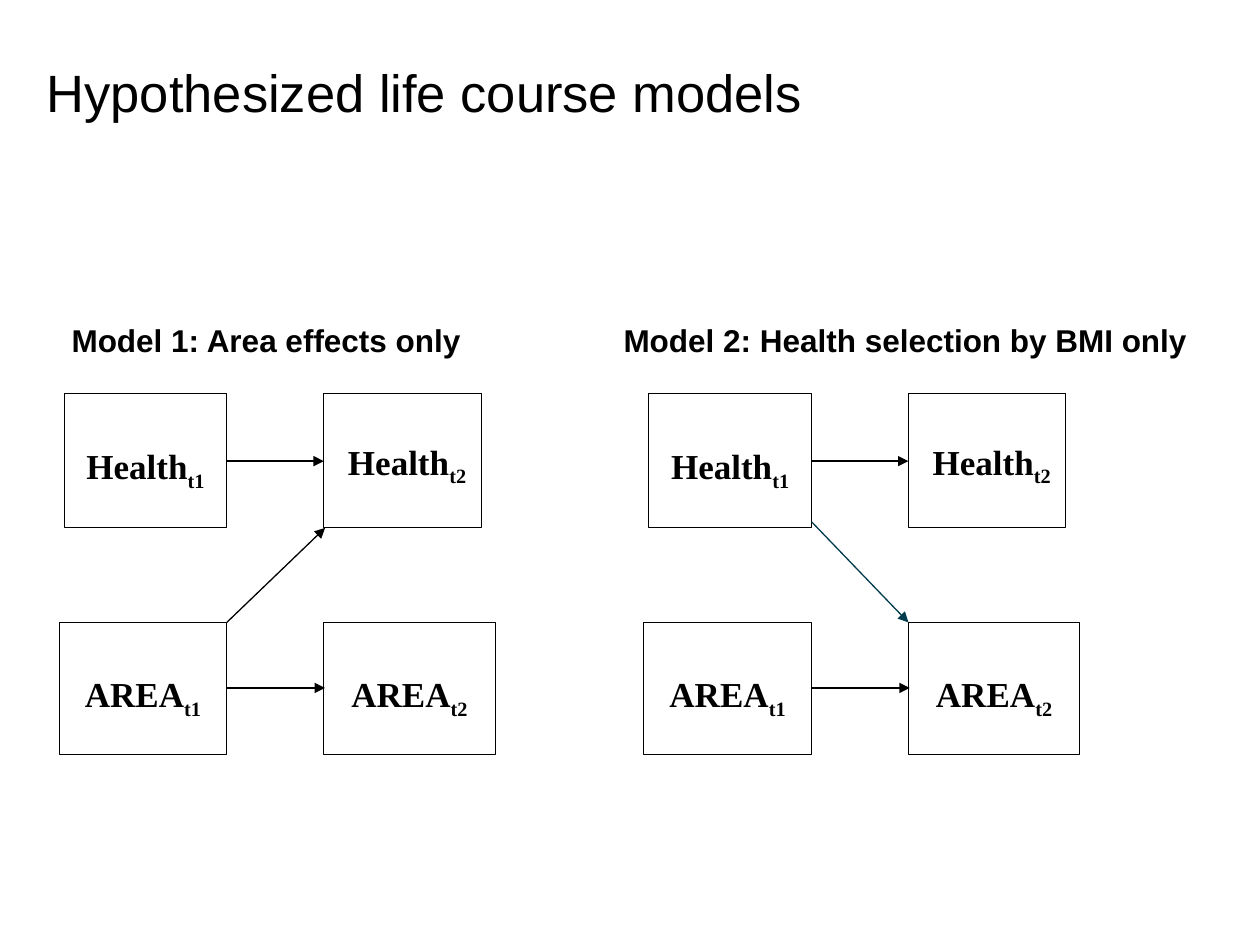
from lxml import etree
from pptx import Presentation
from pptx.dml.color import RGBColor
from pptx.enum.shapes import MSO_CONNECTOR, MSO_SHAPE
from pptx.enum.text import MSO_ANCHOR, MSO_AUTO_SIZE, PP_ALIGN
from pptx.oxml.ns import qn
from pptx.util import Inches, Pt

RECTANGLE = MSO_SHAPE.RECTANGLE
STRAIGHT = MSO_CONNECTOR.STRAIGHT
MIDDLE, TOP = MSO_ANCHOR.MIDDLE, MSO_ANCHOR.TOP
CENTER, LEFT = PP_ALIGN.CENTER, PP_ALIGN.LEFT

BLACK = RGBColor(0x00, 0x00, 0x00)
WHITE = RGBColor(0xFF, 0xFF, 0xFF)
TEAL = RGBColor(0x00, 0x3B, 0x4E)

# Content: places are inches, x measured from the left of each model
TITLE = "Hypothesized life course models"

# word, time, (left, top, width, height), left inset, top inset
VARIABLES = [
    ("Health", "t2", (2.1, 3.12, 1.25, 1.07), 0.17, 0.05),
    ("Health", "t1", (0.04, 3.12, 1.29, 1.07), 0.1, 0.12),
    ("AREA", "t2", (2.1, 4.94, 1.36, 1.05), 0.1, 0.12),
    ("AREA", "t1", (0, 4.94, 1.33, 1.05), 0.1, 0.12),
]

# start, end, colour, line width in points
SHARED_ARROWS = [
    ((1.33, 3.66), (2.1, 3.66), BLACK, 1),
    ((1.33, 5.46), (2.11, 5.46), BLACK, 0.75),
]

# heading, heading left and width, model left, diagonal arrow
MODELS = [
    ("Model 1: Area effects only", 0.47, 4.06, 0.47,
     ((1.33, 4.94), (2.11, 4.19), BLACK, 0.75)),
    ("Model 2: Health selection by BMI only", 4.85, 4.72, 5.11,
     ((1.33, 4.14), (2.1, 4.94), TEAL, 0.75)),
]


def add_run(paragraph, text, font_name, size, bold):
    run = paragraph.add_run()
    run.text = text
    run.font.name = font_name
    run.font.size = Pt(size)
    run.font.bold = bold
    run.font.color.rgb = BLACK
    return run


def add_variable(group, origin, word, time, place, left_inset, top_inset):
    left, top, width, height = place
    box = group.shapes.add_shape(RECTANGLE, Inches(origin + left), Inches(top),
                                 Inches(width), Inches(height))
    box.shadow.inherit = False
    box.fill.solid()
    box.fill.fore_color.rgb = WHITE
    box.line.color.rgb = BLACK
    box.line.width = Pt(0.5)
    frame = box.text_frame
    frame.word_wrap = True
    frame.vertical_anchor = MIDDLE
    frame.margin_left = Inches(left_inset)
    frame.margin_top = Inches(top_inset)
    paragraph = frame.paragraphs[0]
    paragraph.alignment = CENTER
    paragraph.line_spacing = 1.15
    add_run(paragraph, word, "Times New Roman", 20, True)
    subscript = add_run(paragraph, time, "Times New Roman", 20, True)
    subscript.font._element.set("baseline", "-25000")


def add_arrow(group, origin, start, end, color, width):
    arrow = group.shapes.add_connector(
        STRAIGHT, Inches(origin + start[0]), Inches(start[1]),
        Inches(origin + end[0]), Inches(end[1]))
    arrow.line.color.rgb = color
    arrow.line.width = Pt(width)
    etree.SubElement(arrow.line._get_or_add_ln(), qn("a:tailEnd"), type="triangle")
    etree.SubElement(arrow._element.spPr, qn("a:effectLst"))


def add_heading(slide, text, left, width):
    heading = slide.shapes.add_textbox(Inches(left), Inches(2.5),
                                       Inches(width), Inches(0.4))
    heading.text_frame.word_wrap = True
    add_run(heading.text_frame.paragraphs[0], text, "Arial", 18, True)


def main():
    prs = Presentation()
    prs.slide_width, prs.slide_height = Inches(10), Inches(7.5)
    slide = prs.slides.add_slide(prs.slide_layouts[5])

    # Title
    title = slide.shapes.title
    title.left, title.top = Inches(0.27), Inches(0.43)
    title.width, title.height = Inches(6.25), Inches(0.61)
    frame = title.text_frame
    frame.word_wrap = False
    frame.auto_size = MSO_AUTO_SIZE.NONE
    frame.vertical_anchor = TOP
    frame.paragraphs[0].alignment = LEFT
    add_run(frame.paragraphs[0], TITLE, "Arial", 30, False)

    # One heading and one grouped diagram per model
    for text, heading_left, heading_width, origin, diagonal in MODELS:
        diagram = slide.shapes.add_group_shape()
        for variable in VARIABLES:
            add_variable(diagram, origin, *variable)
        for arrow in SHARED_ARROWS + [diagonal]:
            add_arrow(diagram, origin, *arrow)
        add_heading(slide, text, heading_left, heading_width)

    prs.save("out.pptx")


if __name__ == "__main__":
    main()
